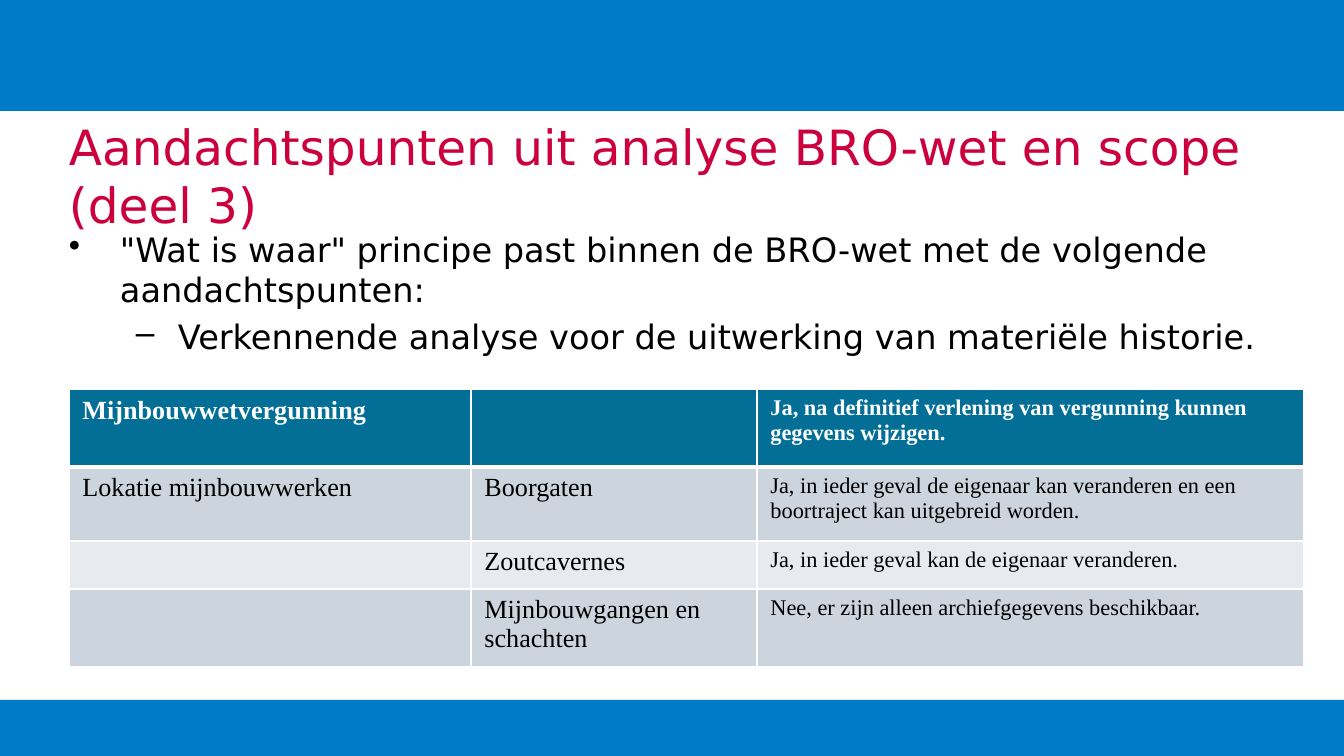
from lxml.etree import SubElement
from pptx import Presentation
from pptx.dml.color import RGBColor
from pptx.enum.shapes import MSO_SHAPE
from pptx.enum.text import MSO_ANCHOR
from pptx.oxml.ns import qn
from pptx.util import Emu, Pt

WIDTH, HEIGHT = 1344, 756
LEFT, CONTENT_WIDTH = 69, 1235


def px(length):
    return Emu(round(length * 914400 / 134.4))


def rgb(code):
    return RGBColor.from_string(code)


def assign(target, values):
    for name, value in values.items():
        setattr(target, name, value)


class Deck:
    blue, red, black, white = "007BC7", "CC003D", "000000", "FFFFFF"
    header, bands = "046F96", ("CCD5DD", "E7EBEF")
    sans, serif = "DejaVu Sans", "Times New Roman"

    def __init__(self):
        self.presentation = Presentation()
        assign(self.presentation, {"slide_width": px(WIDTH), "slide_height": px(HEIGHT)})
        self.slide = self.presentation.slides.add_slide(self.presentation.slide_layouts[6])

    def band(self, top, height):
        bar = self.slide.shapes.add_shape(
            MSO_SHAPE.RECTANGLE, 0, px(top), px(WIDTH), px(height))
        bar.shadow.inherit = False
        bar.fill.solid()
        bar.fill.fore_color.rgb = rgb(self.blue)
        bar.line.fill.background()

    def frame(self, top, height, anchor):
        box = self.slide.shapes.add_textbox(px(LEFT), px(top), px(CONTENT_WIDTH), px(height))
        assign(box.text_frame, {
            "word_wrap": True, "vertical_anchor": anchor,
            "margin_left": 0, "margin_top": 0, "margin_right": 0, "margin_bottom": 0})
        return box.text_frame

    def add_text(self, paragraph, text, color, **style):
        run = paragraph.add_run()
        run.text = text
        assign(run.font, style)
        run.font.color.rgb = rgb(color)

    def title(self, text, top, height):
        heading = self.frame(top, height, MSO_ANCHOR.MIDDLE).paragraphs[0]
        self.add_text(heading, text, self.red, name=self.sans, size=Pt(26))

    def bullets(self, points, top, height):
        body = self.frame(top, height, MSO_ANCHOR.TOP)
        for index, (text, level, mark, indent, hanging) in enumerate(points):
            point = body.add_paragraph() if index else body.paragraphs[0]
            assign(point, {"level": level, "space_before": Pt(3.6 if index else 0)})
            properties = point._p.get_or_add_pPr()
            properties.set("marL", str(px(indent)))
            properties.set("indent", str(-px(hanging)))
            SubElement(properties, qn("a:buChar"), char=mark)
            self.add_text(point, text, self.black, name=self.sans, size=Pt(18))

    def border(self, cell, widths):
        for side, width in widths.items():
            line = SubElement(cell._tc.get_or_add_tcPr(), qn(f"a:ln{side}"), w=str(Pt(width)))
            SubElement(SubElement(line, qn("a:solidFill")), qn("a:srgbClr"), val=self.white)

    def table(self, rows, top, widths, heights):
        grid = self.slide.shapes.add_table(
            len(rows), len(widths), px(LEFT), px(top), px(sum(widths)), px(sum(heights))).table
        for column, width in zip(grid.columns, widths):
            column.width = px(width)
        for r, (row, height) in enumerate(zip(rows, heights)):
            grid.rows[r].height = px(height)
            fill = self.bands[(r - 1) % 2] if r else self.header
            for c, text in enumerate(row):
                cell = grid.cell(r, c)
                self.border(cell, {"L": 1, "R": 1, "T": 3 if r == 1 else 1, "B": 1 if r else 3})
                cell.fill.solid()
                cell.fill.fore_color.rgb = rgb(fill)
                paragraph = cell.text_frame.paragraphs[0]
                if text:
                    self.add_text(paragraph, text, self.black if r else self.white,
                                  name=self.serif, size=Pt(12 if c == 2 else 14), bold=r == 0)
                else:
                    SubElement(paragraph._p, qn("a:endParaRPr"), sz="1400")


def main():
    deck = Deck()
    deck.band(0, 111)
    deck.band(700, 56)
    deck.title("Aandachtspunten uit analyse BRO-wet en scope (deel 3)", 148, 54)
    deck.bullets([
        ("\"Wat is waar\" principe past binnen de BRO-wet met de volgende aandachtspunten:",
         0, "•", 51, 51),
        ("Verkennende analyse voor de uitwerking van materiële historie.", 1, "–", 109, 42),
    ], 229, 455)
    deck.table([
        ("Mijnbouwwetvergunning", "",
         "Ja, na definitief verlening van vergunning kunnen gegevens wijzigen."),
        ("Lokatie mijnbouwwerken", "Boorgaten",
         "Ja, in ieder geval de eigenaar kan veranderen en een boortraject kan uitgebreid worden."),
        ("", "Zoutcavernes", "Ja, in ieder geval kan de eigenaar veranderen."),
        ("", "Mijnbouwgangen en schachten", "Nee, er zijn alleen archiefgegevens beschikbaar."),
    ], 389, (402, 286, 547), (78, 74, 48, 78))
    deck.presentation.save("out.pptx")


if __name__ == "__main__":
    main()
